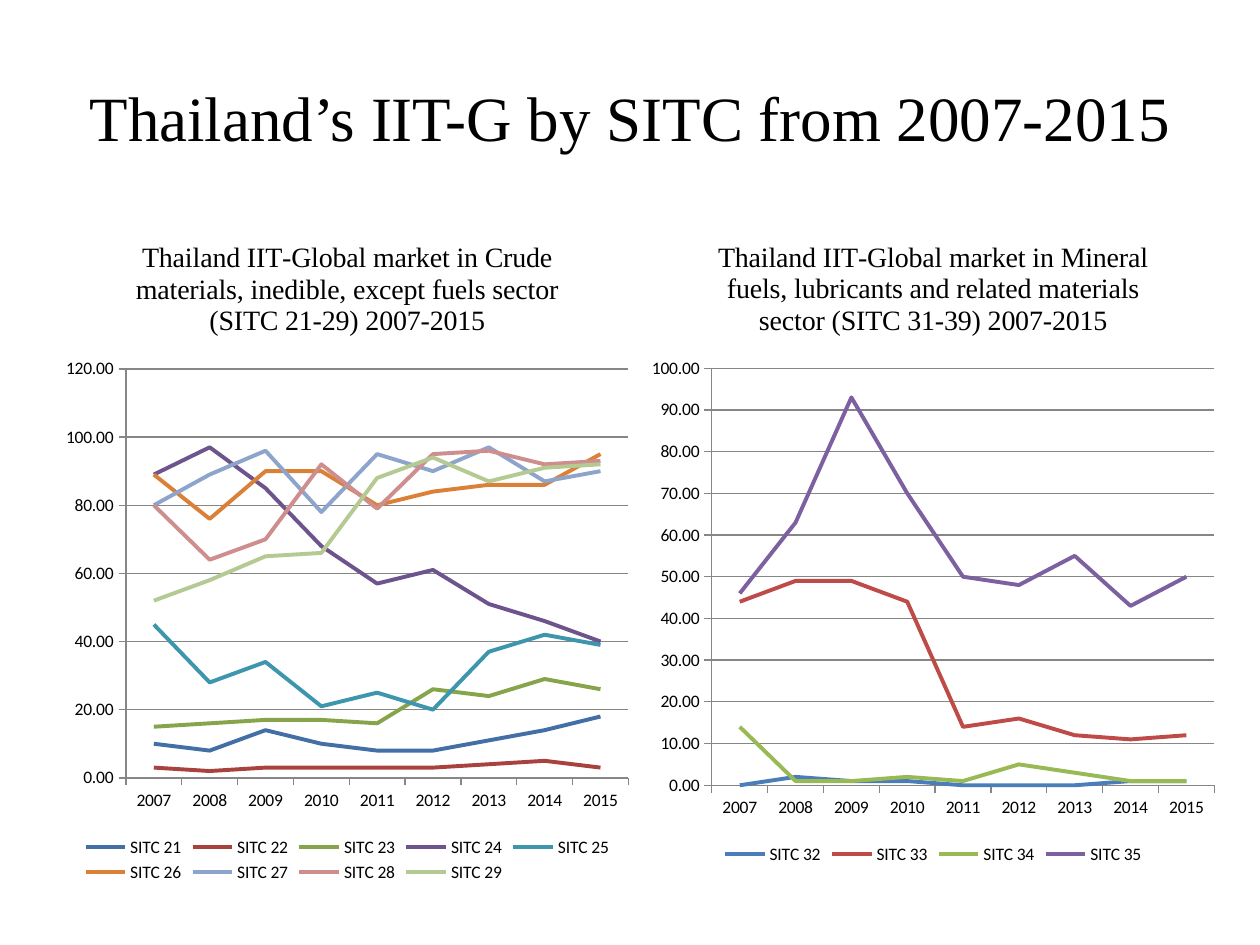
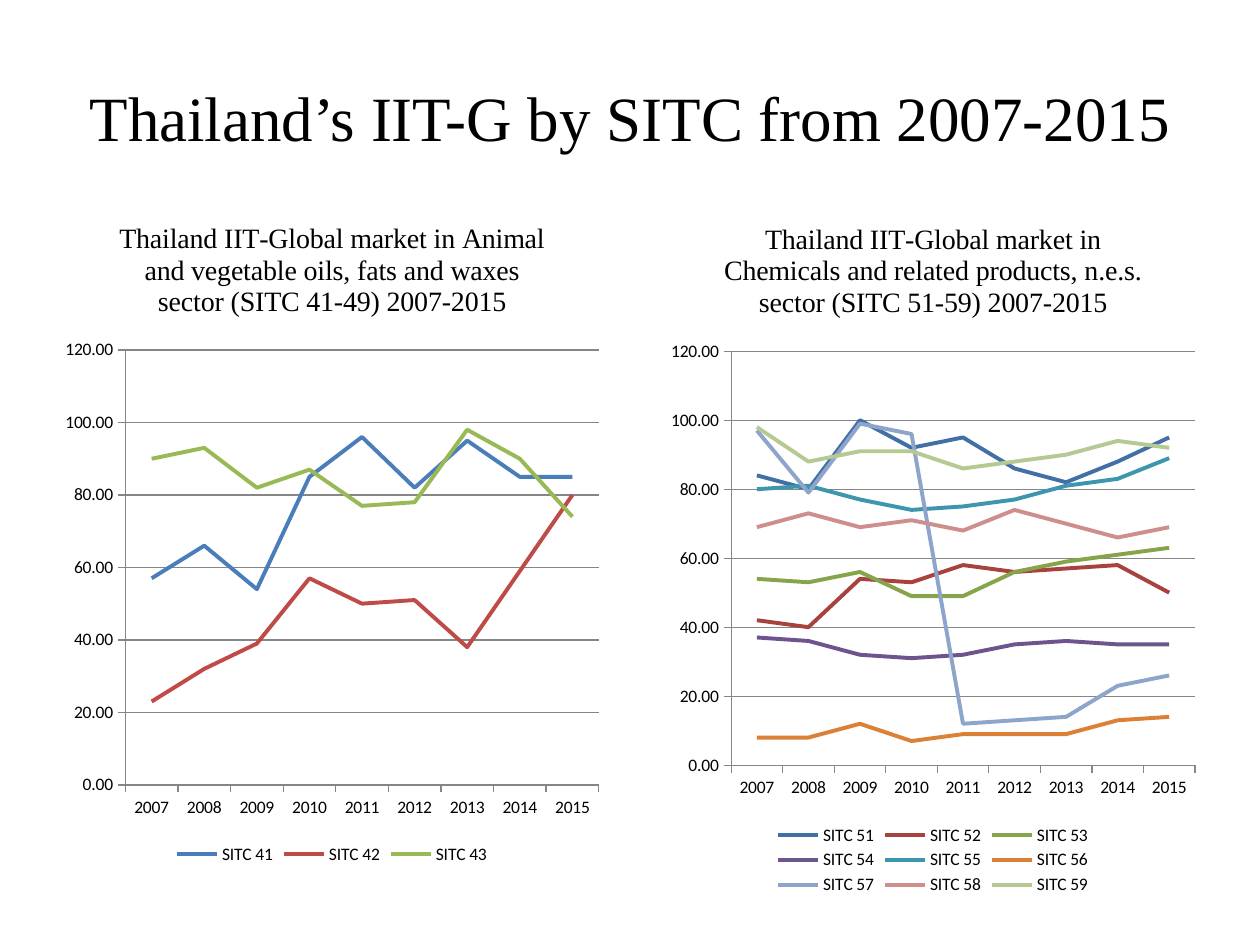
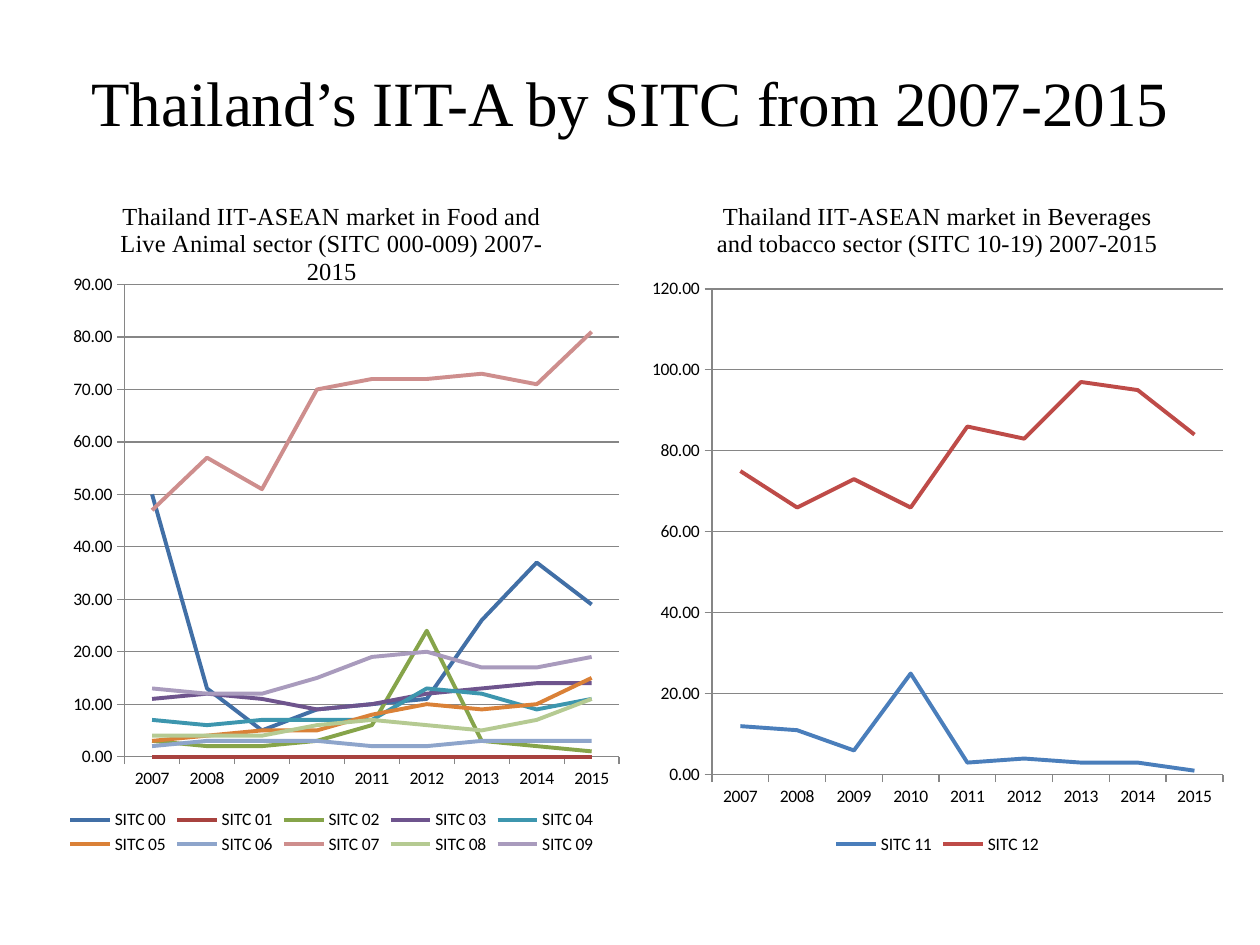
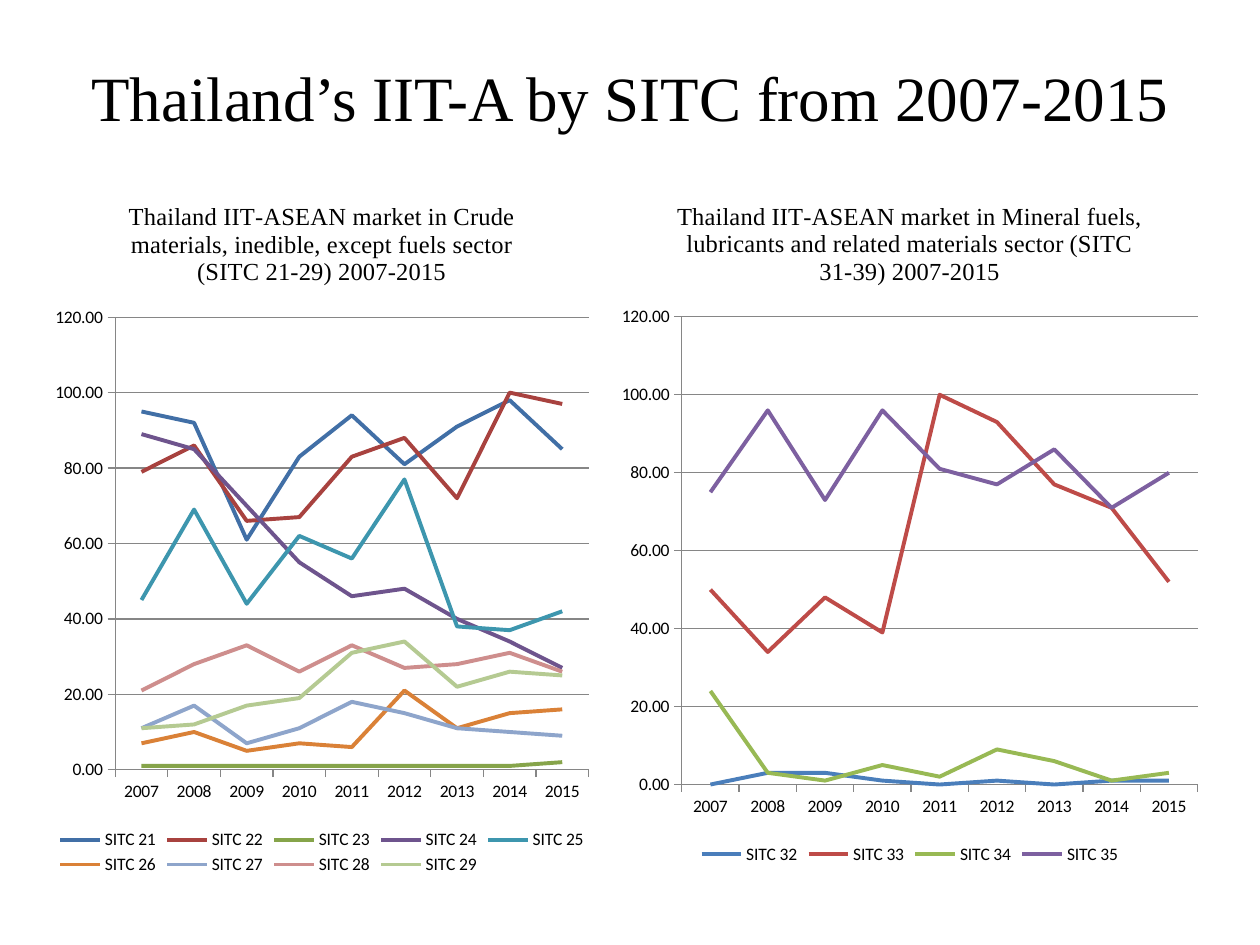
from dataclasses import dataclass

from lxml import etree
from pptx import Presentation
from pptx.chart.data import CategoryChartData
from pptx.dml.color import RGBColor
from pptx.enum.chart import XL_CHART_TYPE, XL_LEGEND_POSITION, XL_TICK_MARK
from pptx.enum.text import MSO_ANCHOR, PP_ALIGN
from pptx.oxml.ns import qn
from pptx.util import Pt

LINE = XL_CHART_TYPE.LINE
BOTTOM = XL_LEGEND_POSITION.BOTTOM
OUTSIDE = XL_TICK_MARK.OUTSIDE
MIDDLE = MSO_ANCHOR.MIDDLE
CENTER = PP_ALIGN.CENTER

YEARS = [str(year) for year in range(2007, 2016)]
GLOBAL_TITLE = "Thailand’s IIT-G by SITC from 2007-2015"
ASEAN_TITLE = "Thailand’s IIT-A by SITC from 2007-2015"


@dataclass(frozen=True)
class Theme:
    """Colours, fonts and type sizes shared by all slides."""

    text: str = "000000"
    grid: str = "868686"
    few_lines: tuple = ("4A7EBB", "BE4B48", "98B954", "7D60A0")
    many_lines: tuple = ("416FA6", "A8423F", "86A44A", "6E548D", "3D96AE",
                         "DA8137", "8EA5CB", "CE8E8D", "B5CA92", "A99BBD")
    title_font: str = "Times New Roman"
    chart_font: str = "Calibri"
    title_size: int = 36
    label_size: int = 10
    series_width: float = 2.25
    grid_width: float = 0.75


THEME = Theme()


@dataclass(frozen=True)
class Panel:
    """One sector chart: heading, box in points, axis top and SITC series."""

    heading: str
    box: tuple
    axis_top: int
    series: dict
    plot: tuple = ()


GLOBAL_CRUDE = Panel(
    "Thailand IIT-Global market in Crude materials, inedible, except fuels "
    "sector (SITC 21-29) 2007-2015",
    (31, 122.4, 334.8, 384.5), 120, {
        "21": (10, 8, 14, 10, 8, 8, 11, 14, 18),
        "22": (3, 2, 3, 3, 3, 3, 4, 5, 3),
        "23": (15, 16, 17, 17, 16, 26, 24, 29, 26),
        "24": (89, 97, 85, 68, 57, 61, 51, 46, 40),
        "25": (45, 28, 34, 21, 25, 20, 37, 42, 39),
        "26": (89, 76, 90, 90, 80, 84, 86, 86, 95),
        "27": (80, 89, 96, 78, 95, 90, 97, 87, 90),
        "28": (80, 64, 70, 92, 79, 95, 96, 92, 93),
        "29": (52, 58, 65, 66, 88, 94, 87, 91, 92),
    })

GLOBAL_FUELS = Panel(
    "Thailand IIT-Global market in Mineral fuels, lubricants and related "
    "materials sector (SITC 31-39) 2007-2015",
    (365.8, 122.4, 334.8, 374.4), 100, {
        "32": (0, 2, 1, 1, 0, 0, 0, 1, 1),
        "33": (44, 49, 49, 44, 14, 16, 12, 11, 12),
        "34": (14, 1, 1, 2, 1, 5, 3, 1, 1),
        "35": (46, 63, 93, 70, 50, 48, 55, 43, 50),
    })

GLOBAL_OILS = Panel(
    "Thailand IIT-Global market in Animal and vegetable oils, fats and waxes "
    "sector (SITC 41-49) 2007-2015",
    (31, 111.6, 317.5, 385.2), 120, {
        "41": (57, 66, 54, 85, 96, 82, 95, 85, 85),
        "42": (23, 32, 39, 57, 50, 51, 38, 59, 80),
        "43": (90, 93, 82, 87, 77, 78, 98, 90, 74),
    })

GLOBAL_CHEMICALS = Panel(
    "Thailand IIT-Global market in Chemicals and related products, n.e.s. "
    "sector (SITC 51-59) 2007-2015",
    (377.3, 111.6, 311.8, 402.5), 120, {
        "51": (84, 80, 100, 92, 95, 86, 82, 88, 95),
        "52": (42, 40, 54, 53, 58, 56, 57, 58, 50),
        "53": (54, 53, 56, 49, 49, 56, 59, 61, 63),
        "54": (37, 36, 32, 31, 32, 35, 36, 35, 35),
        "55": (80, 81, 77, 74, 75, 77, 81, 83, 89),
        "56": (8, 8, 12, 7, 9, 9, 9, 13, 14),
        "57": (97, 79, 99, 96, 12, 13, 14, 23, 26),
        "58": (69, 73, 69, 71, 68, 74, 70, 66, 69),
        "59": (98, 88, 91, 91, 86, 88, 90, 94, 92),
    })

ASEAN_FOOD = Panel(
    "Thailand IIT-ASEAN market in Food and Live Animal sector "
    "(SITC 000-009) 2007-2015",
    (25.2, 100.1, 329, 391), 90, {
        "00": (50, 13, 5, 9, 10, 11, 26, 37, 29),
        "01": (0, 0, 0, 0, 0, 0, 0, 0, 0),
        "02": (3, 2, 2, 3, 6, 24, 3, 2, 1),
        "03": (11, 12, 11, 9, 10, 12, 13, 14, 14),
        "04": (7, 6, 7, 7, 7, 13, 12, 9, 11),
        "05": (3, 4, 5, 5, 8, 10, 9, 10, 15),
        "06": (2, 3, 3, 3, 2, 2, 3, 3, 3),
        "07": (47, 57, 51, 70, 72, 72, 73, 71, 81),
        "08": (4, 4, 4, 6, 7, 6, 5, 7, 11),
        "09": (13, 12, 12, 15, 19, 20, 17, 17, 19),
    }, plot=(0.14, 0.16, 0.86, 0.69))

ASEAN_BEVERAGES = Panel(
    "Thailand IIT-ASEAN market in Beverages and tobacco sector "
    "(SITC 10-19) 2007-2015",
    (365.8, 100.1, 339.8, 391), 120, {
        "11": (12, 11, 6, 25, 3, 4, 3, 3, 1),
        "12": (75, 66, 73, 66, 86, 83, 97, 95, 84),
    })

ASEAN_CRUDE = Panel(
    "Thailand IIT-ASEAN market in Crude materials, inedible, except fuels "
    "sector (SITC 21-29) 2007-2015",
    (25.2, 100.1, 317.5, 402.5), 120, {
        "21": (95, 92, 61, 83, 94, 81, 91, 98, 85),
        "22": (79, 86, 66, 67, 83, 88, 72, 100, 97),
        "23": (1, 1, 1, 1, 1, 1, 1, 1, 2),
        "24": (89, 85, 70, 55, 46, 48, 40, 34, 27),
        "25": (45, 69, 44, 62, 56, 77, 38, 37, 42),
        "26": (7, 10, 5, 7, 6, 21, 11, 15, 16),
        "27": (11, 17, 7, 11, 18, 15, 11, 10, 9),
        "28": (21, 28, 33, 26, 33, 27, 28, 31, 26),
        "29": (11, 12, 17, 19, 31, 34, 22, 26, 25),
    })

ASEAN_FUELS = Panel(
    "Thailand IIT-ASEAN market in Mineral fuels, lubricants and related "
    "materials sector (SITC 31-39) 2007-2015",
    (348.5, 100.1, 342.7, 396.7), 120, {
        "32": (0, 3, 3, 1, 0, 1, 0, 1, 1),
        "33": (50, 34, 48, 39, 100, 93, 77, 71, 52),
        "34": (24, 3, 1, 5, 2, 9, 6, 1, 3),
        "35": (75, 96, 73, 96, 81, 77, 86, 71, 80),
    })

SLIDES = (
    (GLOBAL_TITLE, 90, 16, (GLOBAL_CRUDE, GLOBAL_FUELS)),
    (GLOBAL_TITLE, 90, 16, (GLOBAL_OILS, GLOBAL_CHEMICALS)),
    (ASEAN_TITLE, 72.7, 14, (ASEAN_FOOD, ASEAN_BEVERAGES)),
    (ASEAN_TITLE, 67, 14, (ASEAN_CRUDE, ASEAN_FUELS)),
)


def style_font(font, name, size):
    """Give a font its typeface and size in the plain text colour."""
    font.name = name
    font.size = Pt(size)
    font.bold = False
    font.color.rgb = RGBColor.from_string(THEME.text)


def style_line(line, color, width):
    """Give a line its colour and width."""
    line.color.rgb = RGBColor.from_string(color)
    line.width = Pt(width)


def add_title(slide, text, height):
    """Add the centred slide title."""
    title = slide.shapes.add_textbox(Pt(36), Pt(21.6), Pt(648), Pt(height))
    frame = title.text_frame
    frame.word_wrap = True
    frame.vertical_anchor = MIDDLE
    paragraph = frame.paragraphs[0]
    paragraph.text = text
    paragraph.alignment = CENTER
    style_font(paragraph.font, THEME.title_font, THEME.title_size)


def style_axes(chart, axis_top):
    """Set the scale, ticks and gridlines of both axes."""
    values = chart.value_axis
    values.minimum_scale = 0
    values.maximum_scale = axis_top
    values.major_unit = 20 if axis_top > 100 else 10
    values.tick_labels.number_format = "0.00"
    values.tick_labels.number_format_is_linked = False
    values.has_major_gridlines = True
    style_line(values.major_gridlines.format.line, THEME.grid, THEME.grid_width)
    for axis in (values, chart.category_axis):
        axis.major_tick_mark = OUTSIDE
        style_line(axis.format.line, THEME.grid, THEME.grid_width)


def place_plot(chart, fractions):
    """Fix the inner plot area as fractions of the chart."""
    area = chart.plots[0]._element.getparent()
    for old in area.findall(qn("c:layout")):
        area.remove(old)
    layout = etree.Element(qn("c:layout"))
    area.insert(0, layout)
    manual = etree.SubElement(layout, qn("c:manualLayout"))
    settings = [("layoutTarget", "inner"), ("xMode", "edge"), ("yMode", "edge")]
    settings += zip("xywh", fractions)
    for tag, value in settings:
        etree.SubElement(manual, qn(f"c:{tag}")).set("val", str(value))


def add_panel(slide, panel, heading_size):
    """Add one sector line chart with its heading and legend."""
    data = CategoryChartData(number_format="0.00")
    data.categories = YEARS
    for code, values in panel.series.items():
        data.add_series(f"SITC {code}", values)
    chart = slide.shapes.add_chart(LINE, *map(Pt, panel.box), data).chart
    style_font(chart.font, THEME.chart_font, THEME.label_size)

    chart.has_title = True
    heading = chart.chart_title.text_frame.paragraphs[0]
    heading.text = panel.heading
    style_font(heading.font, THEME.title_font, heading_size)

    chart.has_legend = True
    chart.legend.position = BOTTOM
    chart.legend.include_in_layout = False

    style_axes(chart, panel.axis_top)
    plot = chart.plots[0]
    plot.vary_by_categories = False
    few = len(panel.series) <= len(THEME.few_lines)
    palette = THEME.few_lines if few else THEME.many_lines
    for series, color in zip(plot.series, palette):
        series.smooth = False
        style_line(series.format.line, color, THEME.series_width)
    if panel.plot:
        place_plot(chart, panel.plot)


def main():
    """Build the four slides and save them."""
    deck = Presentation()
    deck.slide_width, deck.slide_height = Pt(720), Pt(540)
    blank = deck.slide_layouts[6]
    for title, title_height, heading_size, panels in SLIDES:
        slide = deck.slides.add_slide(blank)
        add_title(slide, title, title_height)
        for panel in panels:
            add_panel(slide, panel, heading_size)
    deck.save("out.pptx")


if __name__ == "__main__":
    main()
